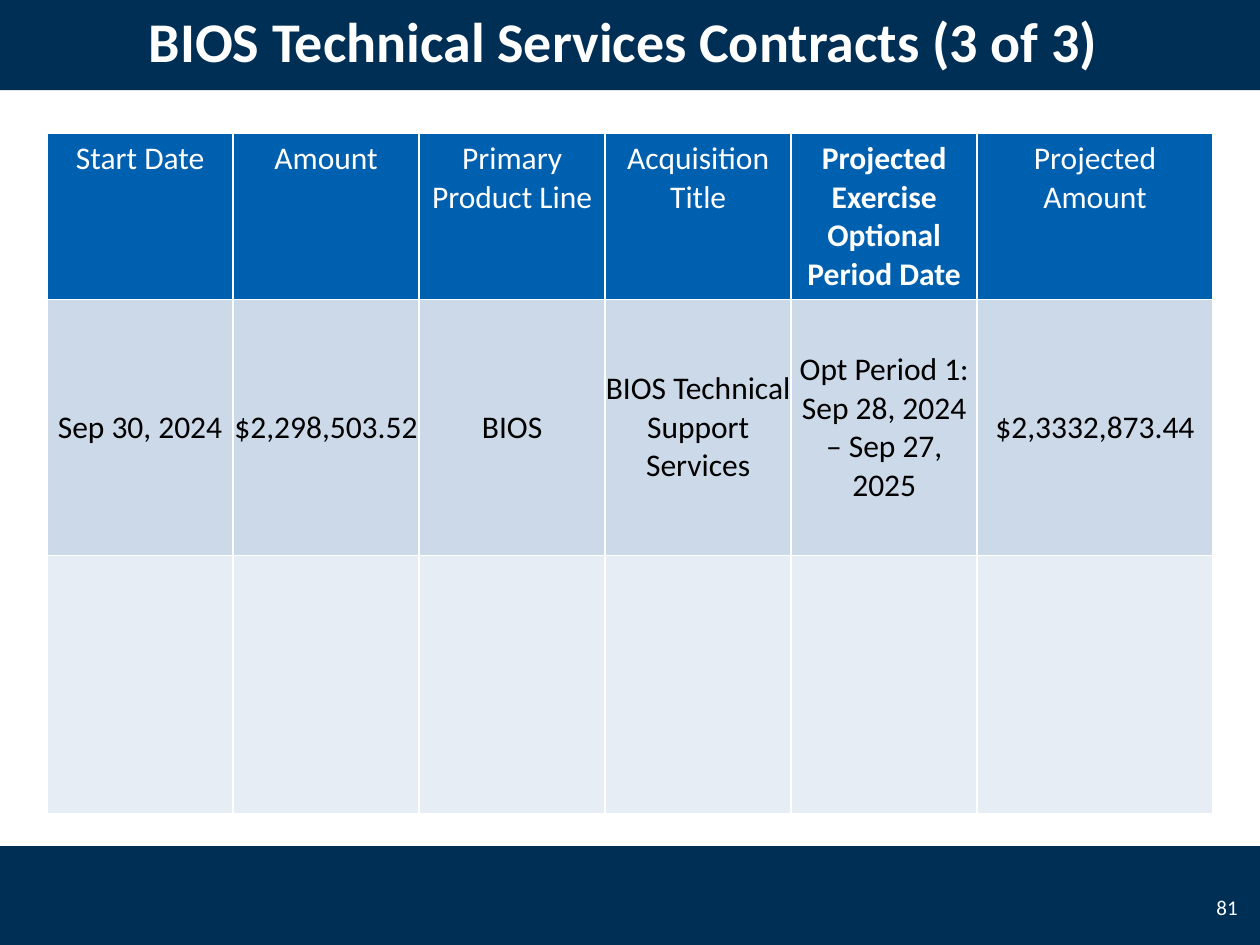
"""Build the BIOS technical services contracts slide."""
from lxml.etree import SubElement as Sub
from pptx import Presentation
from pptx.dml.color import RGBColor
from pptx.enum.shapes import MSO_SHAPE as Shape
from pptx.enum.text import MSO_ANCHOR as Anchor, PP_ALIGN as Align
from pptx.oxml.ns import qn
from pptx.util import Cm, Pt

NAVY = RGBColor(0x00, 0x2F, 0x56)
BLUE = RGBColor(0x00, 0x60, 0xB0)
PALE = RGBColor(0xCC, 0xD9, 0xE8)
LIGHT = RGBColor(0xE7, 0xED, 0xF4)
WHITE = RGBColor(0xFF, 0xFF, 0xFF)
BLACK = RGBColor(0x00, 0x00, 0x00)


def write(frame, text, size, color, bold=False, align=Align.CENTER):
    for i, line in enumerate(text.split("\n")):
        para = frame.add_paragraph() if i else frame.paragraphs[0]
        para.alignment = align
        run = para.add_run()
        run.text = line
        font = run.font
        font.name, font.size, font.bold = "Calibri", Pt(size), bold
        font.color.rgb = color


def edge(cell):
    props = cell._tc.get_or_add_tcPr()
    for side in ("lnL", "lnR", "lnT", "lnB"):
        line = Sub(props, qn(f"a:{side}"), w=str(Pt(1)))
        Sub(Sub(line, qn("a:solidFill")), qn("a:srgbClr"), val=str(WHITE))


deck = Presentation()
deck.slide_width, deck.slide_height = Cm(25.4), Cm(19.05)
slide = deck.slides.add_slide(deck.slide_layouts[6])
shapes = slide.shapes

for top in (17.06, -0.2):
    bar = shapes.add_shape(Shape.RECTANGLE, 0, Cm(top), Cm(25.4), Cm(2.02))
    bar.shadow.inherit = False
    bar.fill.solid()
    bar.fill.fore_color.rgb = NAVY
    bar.line.fill.background()

labels = [
    (0, -0.2, 25.4, 2.02, "BIOS Technical Services Contracts (3 of 3) ", 32, True, Align.CENTER),
    (24.13, 17.78, 1.07, 1.02, "81", 12, False, Align.RIGHT),
]
for left, top, width, height, text, size, bold, align in labels:
    frame = shapes.add_textbox(Cm(left), Cm(top), Cm(width), Cm(height)).text_frame
    frame.word_wrap = True
    frame.vertical_anchor = Anchor.MIDDLE
    if align == Align.RIGHT:
        frame.margin_left = 0
    write(frame, text, size, WHITE, bold, align)

heads = ["Start Date", "Amount", "Primary Product Line", "Acquisition Title",
         "Projected Exercise Optional Period Date", "Projected Amount"]
values = ["Sep 30, 2024", "$2,298,503.52", "BIOS", "BIOS Technical Support Services",
          "Opt Period 1: Sep 28, 2024\n– Sep 27, 2025", "$2,3332,873.44"]
rows = [(3.35, heads, BLUE, WHITE), (5.16, values, PALE, BLACK), (5.2, [""] * 6, LIGHT, BLACK)]
widths = [3.75] * 5 + [4.75]

table = shapes.add_table(len(rows), len(widths), Cm(0.95), Cm(2.69),
                         Cm(sum(widths)), Cm(sum(row[0] for row in rows))).table
for col, width in zip(table.columns, widths):
    col.width = Cm(width)
for r, (height, texts, fill, color) in enumerate(rows):
    table.rows[r].height = Cm(height)
    for c, text in enumerate(texts):
        cell = table.cell(r, c)
        edge(cell)
        cell.fill.solid()
        cell.fill.fore_color.rgb = fill
        if r == 1:
            cell.vertical_anchor = Anchor.MIDDLE
            cell.margin_left = cell.margin_right = cell.margin_top = cell.margin_bottom = 0
        if text:
            write(cell.text_frame, text, 18, color, r == 0 and c == 4)

deck.save("out.pptx")
